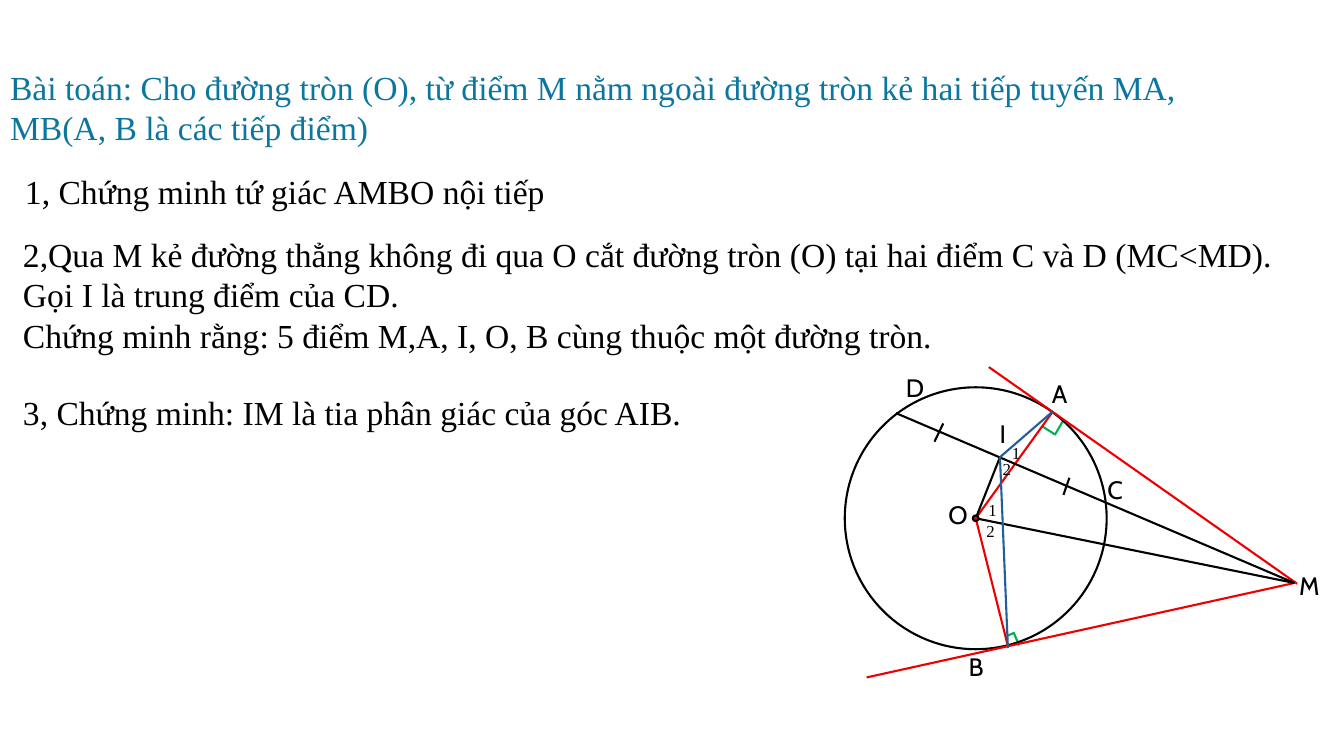
from lxml import etree
from pptx import Presentation
from pptx.dml.color import RGBColor
from pptx.enum.shapes import MSO_CONNECTOR, MSO_SHAPE
from pptx.enum.text import MSO_ANCHOR, MSO_AUTO_SIZE, PP_ALIGN
from pptx.oxml.ns import qn
from pptx.util import Cm, Pt

BLACK = RGBColor(0x00, 0x00, 0x00)
RED = RGBColor(0xEE, 0x00, 0x00)
GREEN = RGBColor(0x00, 0xB0, 0x50)
BLUE = RGBColor(0x21, 0x5F, 0x9A)
TEAL = RGBColor(0x0B, 0x76, 0xA0)
SERIF = "Times New Roman"
LABEL_FONT = "Cabin"
LINE_WIDTH = Pt(1.5)

# Points of the figure, in centimetres
O = (24.59, 13.06)
A = (26.54, 10.36)
B = (25.4, 16.28)
M = (32.62, 14.69)
I = (25.2, 11.52)
D = (22.58, 10.41)
RADIUS = 3.3
DOT_RADIUS = 0.07

PROBLEM = ("Bài toán: Cho đường tròn (O), từ điểm M nằm ngoài đường tròn kẻ "
           "hai tiếp tuyến MA, MB(A, B là các tiếp điểm)")
QUESTIONS = [
    (0.38, 4.19, 13.69, 1.27, ["1, Chứng minh tứ giác AMBO nội tiếp"]),
    (0.33, 5.77, 33.1, 3.33, [
        "2,Qua M kẻ đường thẳng không đi qua O cắt đường tròn (O) tại hai "
        "điểm C và D (MC<MD). Gọi I là trung điểm của CD.",
        "Chứng minh rằng: 5 điểm M,A, I, O, B cùng thuộc một đường tròn.",
    ]),
    (0.33, 9.75, 19.46, 1.27, ["3, Chứng minh: IM là tia phân giác của góc AIB."]),
]
SEGMENTS = [
    (O, A, RED),
    (O, B, RED),
    ((21.84, 17.07), M, RED),
    ((24.92, 9.25), (32.69, 14.71), RED),
    (D, M, BLACK),
    (I, O, BLACK),
    (O, M, BLACK),
    ((23.77, 10.67), (23.55, 11.13), BLACK),
    ((26.95, 12.04), (26.8, 12.47), BLACK),
    (I, A, BLUE),
    (I, (25.4, 16.33), BLUE),
]
RIGHT_ANGLES = [
    [(26.26, 10.74), (26.59, 10.95), (26.8, 10.59)],
    [(25.37, 16.03), (25.55, 15.95), (25.68, 16.26)],
]
POINT_LABELS = [
    ("O", 23.65, 12.47), ("A", 26.26, 9.4), ("B", 24.16, 16.28),
    ("M", 32.49, 14.25), ("C", 27.66, 11.84), ("D", 22.58, 9.25),
    ("I", 24.94, 10.41),
]
ANGLE_LABELS = [
    ("1", 25.25, 11.02), ("2", 25.02, 11.43),
    ("1", 24.66, 12.47), ("2", 24.61, 13.0),
]


def format_font(paragraph, name, size, color):
    paragraph.font.name = name
    paragraph.font.size = Pt(size)
    paragraph.font.color.rgb = color


def set_problem(title):
    title.left, title.top, title.width, title.height = Cm(0), Cm(1.55), Cm(30.76), Cm(2.31)
    frame = title.text_frame
    frame.text = PROBLEM
    frame.auto_size = MSO_AUTO_SIZE.NONE
    frame.vertical_anchor = MSO_ANCHOR.TOP
    paragraph = frame.paragraphs[0]
    paragraph.alignment = PP_ALIGN.LEFT
    format_font(paragraph, SERIF, 24, TEAL)


def add_text(slide, left, top, width, height, lines, font_name=SERIF, size=24):
    box = slide.shapes.add_textbox(Cm(left), Cm(top), Cm(width), Cm(height))
    frame = box.text_frame
    frame.word_wrap = True
    frame.text = "\n".join(lines)
    for paragraph in frame.paragraphs:
        format_font(paragraph, font_name, size, BLACK)


def add_segment(slide, start, end, color):
    line = slide.shapes.add_connector(
        MSO_CONNECTOR.STRAIGHT, *(Cm(value) for value in (*start, *end)))
    line.line.color.rgb = color
    line.line.width = LINE_WIDTH
    etree.SubElement(line._element.spPr, qn("a:effectLst"))


def format_outline(shape, color):
    shape.shadow.inherit = False
    shape.fill.background()
    shape.line.color.rgb = color
    shape.line.width = LINE_WIDTH


def add_circle(slide, center, radius):
    left, top = (Cm(value - radius) for value in center)
    circle = slide.shapes.add_shape(
        MSO_SHAPE.OVAL, left, top, Cm(2 * radius), Cm(2 * radius))
    format_outline(circle, BLACK)
    return circle


def add_right_angle(slide, points):
    start, *others = [(Cm(x), Cm(y)) for x, y in points]
    builder = slide.shapes.build_freeform(*start)
    builder.add_line_segments(others, close=False)
    format_outline(builder.convert_to_shape(), GREEN)


def main():
    presentation = Presentation()
    presentation.slide_width, presentation.slide_height = Cm(33.87), Cm(19.05)
    slide = presentation.slides.add_slide(presentation.slide_layouts[5])
    set_problem(slide.shapes.title)
    for question in QUESTIONS:
        add_text(slide, *question)

    for points in RIGHT_ANGLES:
        add_right_angle(slide, points)
    add_circle(slide, O, RADIUS)
    for segment in SEGMENTS:
        add_segment(slide, *segment)
    dot = add_circle(slide, O, DOT_RADIUS)
    dot.fill.solid()
    dot.fill.fore_color.rgb = RED

    for name, left, top in POINT_LABELS:
        add_text(slide, left, top, 0.94, 1.02, [name], LABEL_FONT, 18)
    for number, left, top in ANGLE_LABELS:
        add_text(slide, left, top, 0.94, 0.76, [number], SERIF, 12)
    presentation.save("out.pptx")


if __name__ == "__main__":
    main()
